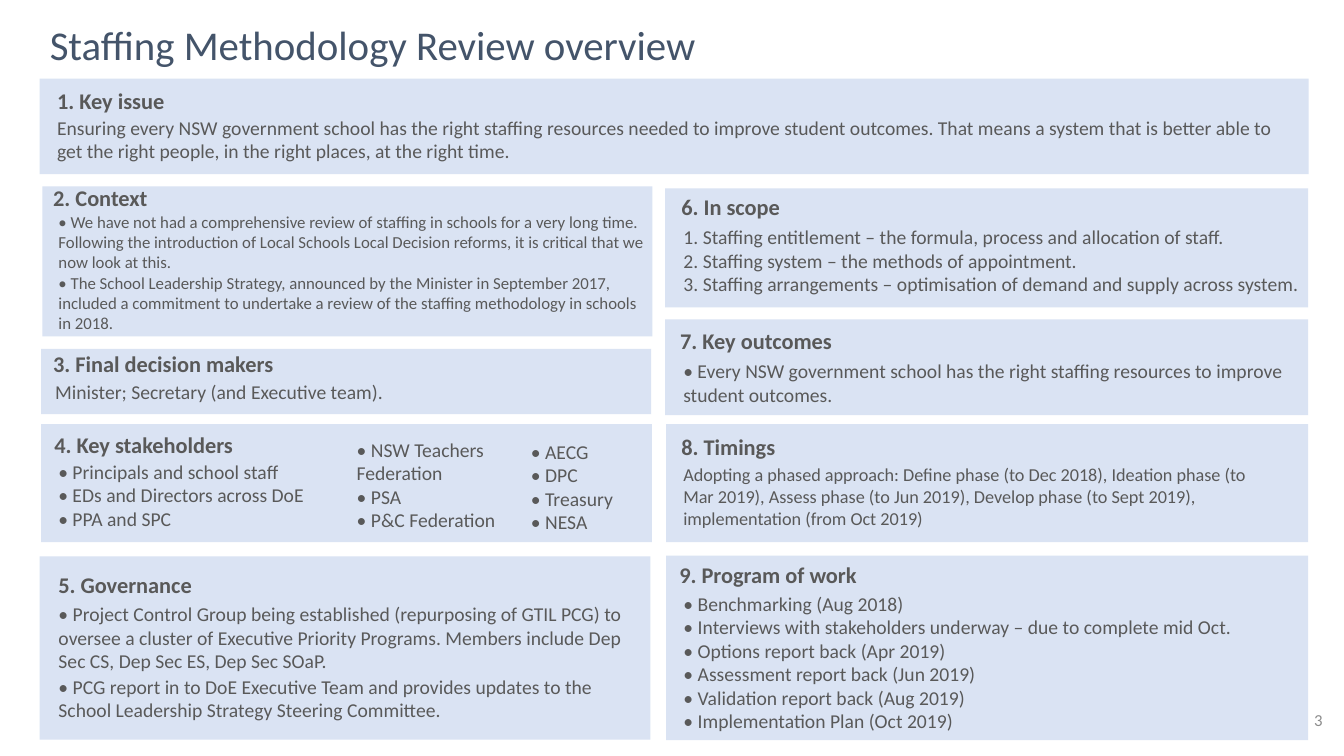
from pptx import Presentation
from pptx.dml.color import RGBColor
from pptx.enum.shapes import MSO_SHAPE
from pptx.enum.text import MSO_ANCHOR, MSO_AUTO_SIZE, PP_ALIGN
from pptx.oxml.ns import qn
from pptx.util import Cm, Pt
from lxml.etree import SubElement


def colour(code):
    return RGBColor.from_string(code)


class OverviewSlide:
    font = "Calibri"
    panel_fill = "DAE3F3"
    ink = "595959"
    title_ink = "44546A"
    number_ink = "8C8C8C"

    def __init__(self, deck):
        self.slide = deck.slides.add_slide(deck.slide_layouts[4])
        self.bodies = [p for p in self.slide.placeholders
                       if p.placeholder_format.idx in (1, 2, 3, 4)]

    def place(self, shape, box):
        shape.left, shape.top, shape.width, shape.height = map(Cm, box)

    def fill_text(self, shape, lines, size, bold=False, ink=None,
                  align=PP_ALIGN.LEFT, anchor=MSO_ANCHOR.TOP, spacing=1.0, gap=0):
        frame = shape.text_frame
        frame.text = "\n".join(lines)
        frame.word_wrap = True
        frame.auto_size = MSO_AUTO_SIZE.NONE
        frame.vertical_anchor = anchor
        for position, paragraph in enumerate(frame.paragraphs):
            if shape.is_placeholder:
                properties = paragraph._p.get_or_add_pPr()
                properties.set("marL", "0")
                properties.set("indent", "0")
                SubElement(properties, qn("a:buNone"))
            paragraph.alignment = align
            paragraph.line_spacing = spacing
            paragraph.space_before = Pt(gap if position else 0)
            for run in paragraph.runs:
                run.font.name = self.font
                run.font.size = Pt(size)
                run.font.bold = bold
                run.font.color.rgb = colour(ink or self.ink)

    def title(self, words, box):
        heading = self.slide.shapes.title
        self.place(heading, box)
        self.fill_text(heading, [words], 29.2, ink=self.title_ink, spacing=0.9)

    def panel(self, box):
        panel = self.slide.shapes.add_shape(MSO_SHAPE.RECTANGLE, *map(Cm, box))
        panel.shadow.inherit = False
        panel.fill.solid()
        panel.fill.fore_color.rgb = colour(self.panel_fill)
        panel.line.fill.background()

    def text(self, lines, box, size=14, **style):
        self.fill_text(self.slide.shapes.add_textbox(*map(Cm, box)), lines, size, **style)

    def heading(self, words, left, top):
        self.text([words], (left, top, 10, 0.94), 16, bold=True)

    def listing(self, lines, box, size=14, gap=0):
        body = self.bodies.pop(0)
        self.slide.shapes.element.append(body.element)
        self.place(body, box)
        self.fill_text(body, lines, size, gap=gap)

    def number(self, digits, box):
        self.text([digits], box, 12, ink=self.number_ink,
                  align=PP_ALIGN.RIGHT, anchor=MSO_ANCHOR.MIDDLE)


def main():
    deck = Presentation()
    deck.slide_width, deck.slide_height = Cm(33.87), Cm(19.05)
    page = OverviewSlide(deck)
    page.title("Staffing Methodology Review overview", (1, 0.51, 22.99, 1.83))

    page.panel((1, 1.98, 31.98, 2.41))
    page.heading("1. Key issue", 1.19, 2.06)
    page.text(["Ensuring every NSW government school has the right staffing resources needed "
               "to improve student outcomes. That means a system that is better able to get "
               "the right people, in the right places, at the right time."],
              (1.19, 2.79, 31.27, 1.45))

    page.panel((1.07, 4.7, 15.37, 3.78))
    page.heading("2. Context", 1.09, 4.52)
    page.listing(["• We have not had a comprehensive review of staffing in schools for a very "
                  "long time. Following the introduction of Local Schools Local Decision "
                  "reforms, it is critical that we now look at this.",
                  "• The School Leadership Strategy, announced by the Minister in September "
                  "2017, included a commitment to undertake a review of the staffing "
                  "methodology in schools in 2018."],
                 (1.22, 5.21, 15.44, 3.33), size=12)

    page.panel((1.04, 8.79, 15.37, 1.65))
    page.heading("3. Final decision makers", 1.09, 8.71)
    page.text(["Minister; Secretary (and Executive team)."], (1.14, 9.45, 14.86, 0.86))

    page.panel((1.04, 10.69, 15.39, 2.97))
    page.heading("4. Key stakeholders", 1.12, 10.74)
    stakeholder_columns = [
        ((1.22, 11.46, 7.87, 2.06), ["• Principals and school staff",
                                     "• EDs and Directors across DoE", "• PPA and SPC"]),
        ((8.74, 10.9, 4.6, 2.64), ["• NSW Teachers Federation", "• PSA", "• P&C Federation"]),
        ((13.13, 10.95, 3, 2.64), ["• AECG", "• DPC", "• Treasury", "• NESA"]),
    ]
    for box, stakeholders in stakeholder_columns:
        page.text(stakeholders, box)

    page.panel((1, 14.02, 15.39, 4.62))
    page.heading("5. Governance", 1.22, 14.27)
    page.listing(["• Project Control Group being established (repurposing of GTIL PCG) to "
                  "oversee a cluster of Executive Priority Programs. Members include Dep Sec "
                  "CS, Dep Sec ES, Dep Sec SOaP.",
                  "• PCG report in to DoE Executive Team and provides updates to the School "
                  "Leadership Strategy Steering Committee."],
                 (1.22, 15.04, 14.86, 3.25), gap=1.5)

    page.panel((16.76, 4.75, 16.21, 3))
    page.heading("6. In scope", 16.92, 4.75)
    page.listing(["1. Staffing entitlement – the formula, process and allocation of staff.",
                  "2. Staffing system – the methods of appointment.",
                  "3. Staffing arrangements – optimisation of demand and supply across system."],
                 (16.97, 5.54, 16.1, 2.64))

    page.panel((16.76, 8.05, 16.21, 2.41))
    page.heading("7. Key outcomes", 16.89, 8.13)
    page.text(["• Every NSW government school has the right staffing resources to improve "
               "student outcomes."], (16.97, 8.92, 16.15, 1.45))

    page.panel((16.79, 10.69, 16.18, 2.97))
    page.heading("8. Timings", 16.92, 10.8)
    page.text(["Adopting a phased approach: Define phase (to Dec 2018), Ideation phase (to Mar "
               "2019), Assess phase (to Jun 2019), Develop phase (to Sept 2019), "
               "implementation (from Oct 2019)"], (16.97, 11.56, 15.39, 1.93), size=13)

    page.panel((16.79, 14, 16.18, 4.65))
    page.heading("9. Program of work", 16.87, 14.02)
    page.listing(["• Benchmarking (Aug 2018)",
                  "• Interviews with stakeholders underway – due to complete mid Oct.",
                  "• Options report back (Apr 2019)",
                  "• Assessment report back (Jun 2019)",
                  "• Validation report back (Aug 2019)",
                  "• Implementation Plan (Oct 2019)"],
                 (16.97, 14.78, 15.44, 3.79))

    page.number("3", (25.96, 17.63, 7.62, 1.02))
    deck.save("out.pptx")


if __name__ == "__main__":
    main()
